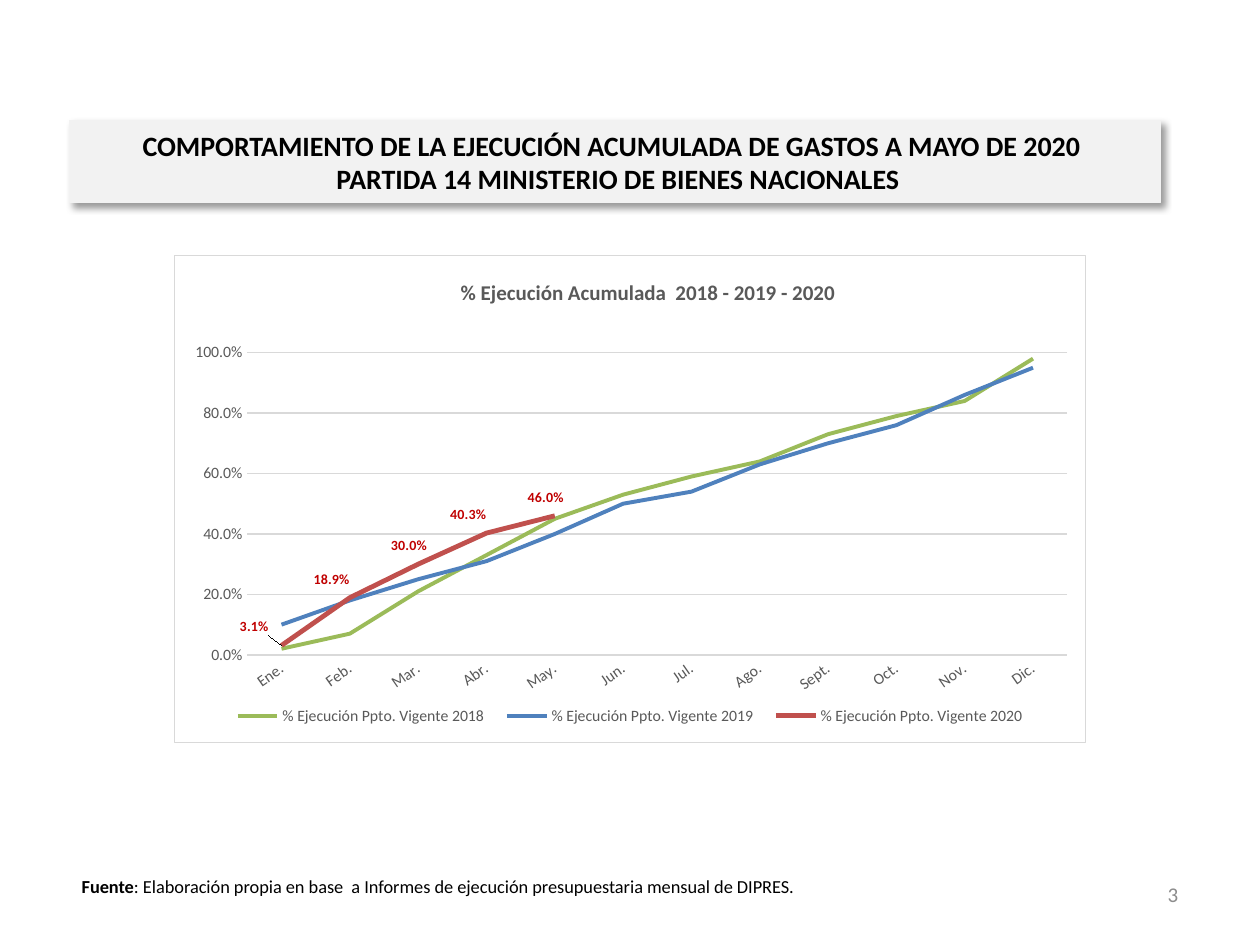
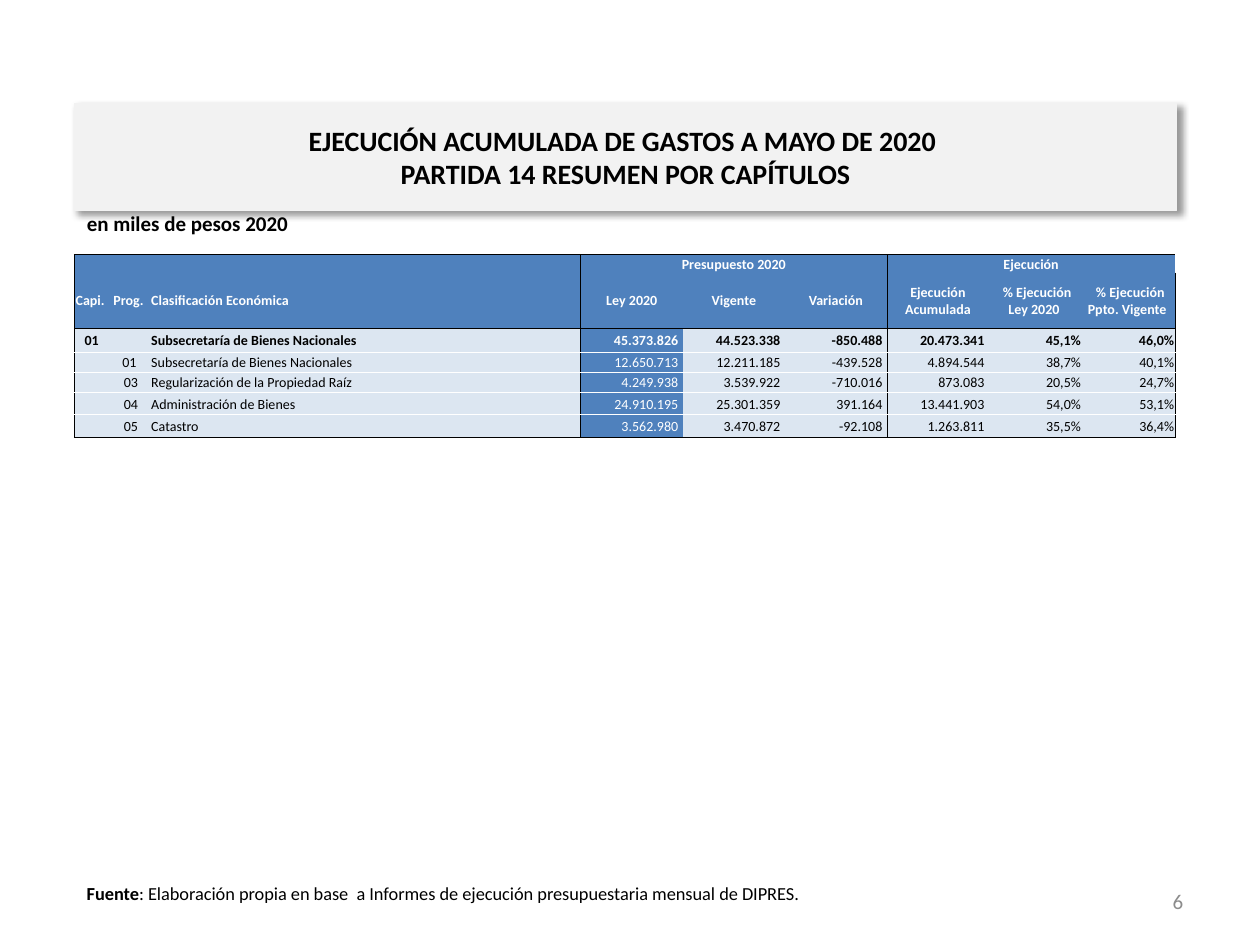
from dataclasses import dataclass
from typing import NamedTuple, Optional

from lxml.etree import SubElement
from pptx import Presentation
from pptx.chart.chart import Chart
from pptx.chart.data import CategoryChartData
from pptx.dml.color import RGBColor
from pptx.enum.chart import XL_LABEL_POSITION, XL_LEGEND_POSITION, XL_TICK_MARK
from pptx.enum.chart import XL_CHART_TYPE
from pptx.enum.shapes import MSO_SHAPE
from pptx.enum.text import MSO_ANCHOR, PP_ALIGN
from pptx.oxml import parse_xml
from pptx.oxml.ns import nsdecls, qn
from pptx.slide import Slide
from pptx.text.text import Font
from pptx.util import Inches, Pt


@dataclass(frozen=True)
class Theme:
    font: str = "Calibri"
    black: str = "000000"
    white: str = "FFFFFF"
    band: str = "F2F2F2"
    page_number: str = "8C8C8C"
    chart_text: str = "595959"
    chart_line: str = "D9D9D9"
    label: str = "C00000"
    blue: str = "4F81BD"
    green: str = "9BBB59"
    red: str = "C0504D"
    pale_blue: str = "DCE6F1"
    title_size: float = 16
    subtitle_size: float = 12
    source_size: float = 10.5
    axis_size: float = 9
    table_size: float = 8


class Box(NamedTuple):
    left: float
    top: float
    width: float
    height: float

    def lengths(self) -> list:
        return [Inches(value) for value in self]


class TextRun(NamedTuple):
    text: str
    bold: bool = False


class LineSeries(NamedTuple):
    name: str
    values: tuple
    color: str
    width: float


class Column(NamedTuple):
    heading: str
    width: float
    align: PP_ALIGN
    heading_align: PP_ALIGN = PP_ALIGN.CENTER


THEME = Theme()
SOURCE_NOTE = (
    TextRun("Fuente", True),
    TextRun(": Elaboración propia en base  a Informes de ejecución presupuestaria mensual de DIPRES."),
)
MONTHS = "Ene. Feb. Mar. Abr. May. Jun. Jul. Ago. Sept. Oct. Nov. Dic.".split()
EXECUTION = (
    LineSeries("% Ejecución Ppto. Vigente 2018",
               (0.02, 0.07, 0.21, 0.33, 0.45, 0.53, 0.59, 0.64, 0.73, 0.79, 0.84, 0.98), THEME.green, 2.25),
    LineSeries("% Ejecución Ppto. Vigente 2019",
               (0.1, 0.18, 0.25, 0.31, 0.4, 0.5, 0.54, 0.63, 0.7, 0.76, 0.86, 0.95), THEME.blue, 2.25),
    LineSeries("% Ejecución Ppto. Vigente 2020", (0.031, 0.189, 0.3, 0.403, 0.46), THEME.red, 2.75),
)
LABEL_SHIFTS = ((-0.03, -0.01), (-0.02, -0.01), (-0.01, -0.01), (-0.02, -0.01), (-0.01, -0.01))

COLUMNS = (
    Column("Capi.", 0.3, PP_ALIGN.CENTER, PP_ALIGN.LEFT),
    Column("Prog.", 0.3, PP_ALIGN.CENTER, PP_ALIGN.LEFT),
    Column("Clasificación Económica", 3.42, PP_ALIGN.JUSTIFY, PP_ALIGN.LEFT),
    Column("Ley 2020", 0.81, PP_ALIGN.RIGHT),
    Column("Vigente", 0.81, PP_ALIGN.RIGHT),
    Column("Variación", 0.81, PP_ALIGN.RIGHT),
    Column("Ejecución Acumulada", 0.81, PP_ALIGN.RIGHT),
    Column(" % Ejecución Ley 2020 ", 0.74, PP_ALIGN.RIGHT),
    Column(" % Ejecución Ppto. Vigente ", 0.74, PP_ALIGN.RIGHT),
)
ROW_HEIGHTS = (0.14, 0.44, 0.19, 0.16, 0.16, 0.18, 0.18)
GROUP_HEADINGS = ("", "", "", "Presupuesto 2020", "", "", "Ejecución", "", "")
GROUP_SIZE = 3
LAW_COLUMN = 3
FIRST_BODY_ROW = 2
CHAPTERS = (
    ("01 ", "", "Subsecretaría de Bienes Nacionales", "45.373.826 ", "44.523.338 ", "-850.488 ",
     "20.473.341 ", "45,1%", "46,0%"),
    ("", "01 ", "Subsecretaría de Bienes Nacionales", "12.650.713 ", "12.211.185 ", "-439.528 ",
     "4.894.544 ", "38,7%", "40,1%"),
    ("", "03", "Regularización de la Propiedad Raíz", "4.249.938 ", "3.539.922 ", "-710.016 ",
     "873.083 ", "20,5%", "24,7%"),
    ("", "04", "Administración de Bienes", "24.910.195 ", "25.301.359 ", "391.164 ",
     "13.441.903 ", "54,0%", "53,1%"),
    ("", "05", "Catastro", "3.562.980 ", "3.470.872 ", "-92.108 ", "1.263.811 ", "35,5%", "36,4%"),
)


def style_font(font: Font, size: float, color: str, bold: bool = False) -> None:
    font.name = THEME.font
    font.size = Pt(size)
    font.bold = bold
    font.color.rgb = RGBColor.from_string(color)


def style_line(line, color: str, width: float) -> None:
    line.color.rgb = RGBColor.from_string(color)
    line.width = Pt(width)


def fill_solid(fill, color: str) -> None:
    fill.solid()
    fill.fore_color.rgb = RGBColor.from_string(color)


def add_text(slide: Slide, box: Box, runs: tuple, size: float, color: str = THEME.black,
             align: PP_ALIGN = PP_ALIGN.LEFT, anchor: MSO_ANCHOR = MSO_ANCHOR.TOP) -> None:
    frame = slide.shapes.add_textbox(*box.lengths()).text_frame
    frame.word_wrap = True
    frame.vertical_anchor = anchor
    paragraph = frame.paragraphs[0]
    paragraph.alignment = align
    for item in runs:
        run = paragraph.add_run()
        run.text = item.text
        style_font(run.font, size, color, item.bold)


def add_title_band(slide: Slide, box: Box, lines: tuple) -> None:
    shape = slide.shapes.add_shape(MSO_SHAPE.RECTANGLE, *box.lengths())
    fill_solid(shape.fill, THEME.band)
    style_line(shape.line, THEME.band, 0.75)
    shape.shadow.inherit = False
    effects = shape._element.spPr.find(qn("a:effectLst"))
    shadow = SubElement(effects, qn("a:outerShdw"), blurRad=str(Pt(4)), dist=str(Pt(3)),
                        dir="2700000", algn="tl", rotWithShape="0")
    shade = SubElement(shadow, qn("a:srgbClr"), val=THEME.black)
    SubElement(shade, qn("a:alpha"), val="40000")
    frame = shape.text_frame
    frame.word_wrap = True
    frame.vertical_anchor = MSO_ANCHOR.MIDDLE
    paragraph = frame.paragraphs[0]
    paragraph.alignment = PP_ALIGN.CENTER
    for index, line in enumerate(lines):
        if index:
            paragraph.add_line_break()
        run = paragraph.add_run()
        run.text = line
        style_font(run.font, THEME.title_size, THEME.black, True)


def add_footer(slide: Slide, left: float, top: float, number: int) -> None:
    add_text(slide, Box(left + 6.57, top, 2.33, 0.4), (TextRun(str(number)),), THEME.subtitle_size,
             THEME.page_number, PP_ALIGN.RIGHT, MSO_ANCHOR.MIDDLE)
    add_text(slide, Box(left, top, 8.66, 0.4), SOURCE_NOTE, THEME.source_size)


def set_layout(parent, after: Optional[str], **settings) -> None:
    """Give a chart part a manual layout, placed after the named child."""
    for old in parent.findall(qn("c:layout")):
        parent.remove(old)
    layout = parse_xml(f"<c:layout {nsdecls('c')}><c:manualLayout/></c:layout>")
    for name, value in settings.items():
        SubElement(layout[0], qn(f"c:{name}"), val=str(value))
    if after:
        parent.find(qn(after)).addnext(layout)
    else:
        parent.insert(0, layout)


def style_axes(chart: Chart) -> None:
    for axis in (chart.category_axis, chart.value_axis):
        axis.major_tick_mark = axis.minor_tick_mark = XL_TICK_MARK.NONE
        style_font(axis.tick_labels.font, THEME.axis_size, THEME.chart_text)
    months, percent = chart.category_axis, chart.value_axis
    style_line(months.format.line, THEME.chart_line, 1)
    months._element.find(qn("c:txPr")).find(qn("a:bodyPr")).set("rot", "-2100000")
    percent.minimum_scale, percent.maximum_scale, percent.major_unit = 0, 1, 0.2
    percent.tick_labels.number_format = "0.0%"
    percent.tick_labels.number_format_is_linked = False
    percent.format.line.fill.background()
    style_line(percent.major_gridlines.format.line, THEME.chart_line, 0.75)


def add_execution_chart(slide: Slide, box: Box) -> None:
    data = CategoryChartData(number_format="0.0%")
    data.categories = MONTHS
    for item in EXECUTION:
        data.add_series(item.name, item.values)
    chart = slide.shapes.add_chart(XL_CHART_TYPE.LINE, *box.lengths(), data).chart
    style_font(chart.font, 10, THEME.black)
    chart._chartSpace.find(qn("c:chart")).addnext(parse_xml(
        f'<c:spPr {nsdecls("c", "a")}><a:solidFill><a:srgbClr val="{THEME.white}"/></a:solidFill>'
        f'<a:ln w="{Pt(0.75)}"><a:solidFill><a:srgbClr val="{THEME.chart_line}"/></a:solidFill></a:ln></c:spPr>'))
    style_axes(chart)

    chart.has_title = True
    run = chart.chart_title.text_frame.paragraphs[0].add_run()
    run.text = "% Ejecución Acumulada  2018 - 2019 - 2020"
    style_font(run.font, 12, THEME.chart_text, True)
    chart.has_legend = True
    chart.legend.position = XL_LEGEND_POSITION.BOTTOM
    chart.legend.include_in_layout = False
    style_font(chart.legend.font, THEME.axis_size, THEME.chart_text)

    edges = {"xMode": "edge", "yMode": "edge"}
    set_layout(chart.chart_title._element, "c:tx", **edges, x=0.31, y=0.04)
    set_layout(chart.legend._element, "c:legendPos", **edges, x=0.05, y=0.91, w=0.9, h=0.07)
    set_layout(chart._chartSpace.chart.plotArea, None, layoutTarget="inner", **edges,
               x=0.08, y=0.2, w=0.9, h=0.62)

    plot = chart.plots[0]
    plot.vary_by_categories = False
    for series, item in zip(plot.series, EXECUTION):
        series.smooth = False
        style_line(series.format.line, item.color, item.width)
    current_year = plot.series[-1]
    for index, (x, y) in enumerate(LABEL_SHIFTS):
        label = current_year.points[index].data_label
        style_font(label.font, 8, THEME.label, True)
        label.position = XL_LABEL_POSITION.ABOVE
    for element, (x, y) in zip(current_year._element.iter(qn("c:dLbl")), LABEL_SHIFTS):
        set_layout(element, "c:idx", x=x, y=y)


def border_colors(row: int, column: int) -> dict:
    """Black frames around column groups, white rules between body rows."""
    last_row = len(ROW_HEIGHTS) - 1
    inner = THEME.white if row >= FIRST_BODY_ROW else None
    return {
        "a:lnL": THEME.black if column % GROUP_SIZE == 0 else None,
        "a:lnR": THEME.black if column % GROUP_SIZE == GROUP_SIZE - 1 else None,
        "a:lnT": THEME.black if row in (0, FIRST_BODY_ROW) else inner,
        "a:lnB": THEME.black if row in (FIRST_BODY_ROW - 1, last_row) else inner,
    }


def style_cell(cell, row: int, column: int, text: str) -> None:
    is_heading = row < FIRST_BODY_ROW
    is_blue = is_heading or column == LAW_COLUMN
    cell.margin_left = cell.margin_right = cell.margin_top = Inches(0.01)
    cell.margin_bottom = 0
    cell.vertical_anchor = MSO_ANCHOR.BOTTOM if row == 0 else MSO_ANCHOR.MIDDLE
    paragraph = cell.text_frame.paragraphs[0]
    if row == 0:
        paragraph.alignment = PP_ALIGN.CENTER
    else:
        paragraph.alignment = COLUMNS[column].heading_align if is_heading else COLUMNS[column].align
    if text:
        run = paragraph.add_run()
        run.text = text
        style_font(run.font, THEME.table_size, THEME.white if is_blue else THEME.black,
                   row <= FIRST_BODY_ROW)
    else:
        SubElement(paragraph._p, qn("a:endParaRPr"), sz=str(int(THEME.table_size * 100)))
    properties = cell._tc.get_or_add_tcPr()
    for tag, color in border_colors(row, column).items():
        line = SubElement(properties, qn(tag), w=str(Pt(0.5)))
        if color:
            SubElement(SubElement(line, qn("a:solidFill")), qn("a:srgbClr"), val=color)
        else:
            SubElement(line, qn("a:noFill"))
    fill_solid(cell.fill, THEME.blue if is_blue else THEME.pale_blue)


def add_chapter_table(slide: Slide, box: Box) -> None:
    rows = (GROUP_HEADINGS, tuple(column.heading for column in COLUMNS), *CHAPTERS)
    table = slide.shapes.add_table(len(rows), len(COLUMNS), *box.lengths()).table
    for index, column in enumerate(COLUMNS):
        table.columns[index].width = Inches(column.width)
    for row, (height, texts) in enumerate(zip(ROW_HEIGHTS, rows)):
        table.rows[row].height = Inches(height)
        for column, text in enumerate(texts):
            style_cell(table.cell(row, column), row, column, text)
    for start in (GROUP_SIZE, 2 * GROUP_SIZE):
        table.cell(0, start).merge(table.cell(0, start + GROUP_SIZE - 1))


def main() -> None:
    presentation = Presentation()
    presentation.slide_width, presentation.slide_height = Inches(10), Inches(7.5)
    blank = presentation.slide_layouts[6]

    slide = presentation.slides.add_slide(blank)
    add_footer(slide, 0.55, 6.9, 3)
    add_title_band(slide, Box(0.55, 0.96, 8.66, 0.65), (
        "COMPORTAMIENTO DE LA EJECUCIÓN ACUMULADA DE GASTOS A MAYO DE 2020 ",
        " PARTIDA 14 MINISTERIO DE BIENES NACIONALES"))
    add_execution_chart(slide, Box(1.38, 2.02, 7.24, 3.88))

    slide = presentation.slides.add_slide(blank)
    add_text(slide, Box(0.59, 1.62, 8.82, 0.4), (TextRun("en miles de pesos 2020", True),), THEME.subtitle_size)
    add_footer(slide, 0.59, 6.95, 6)
    add_title_band(slide, Box(0.59, 0.82, 8.75, 0.85), (
        "EJECUCIÓN ACUMULADA DE GASTOS A MAYO DE 2020 ", "PARTIDA 14 RESUMEN POR CAPÍTULOS"))
    add_chapter_table(slide, Box(0.59, 2.02, 8.75, 1.45))
    presentation.save("out.pptx")


if __name__ == "__main__":
    main()
